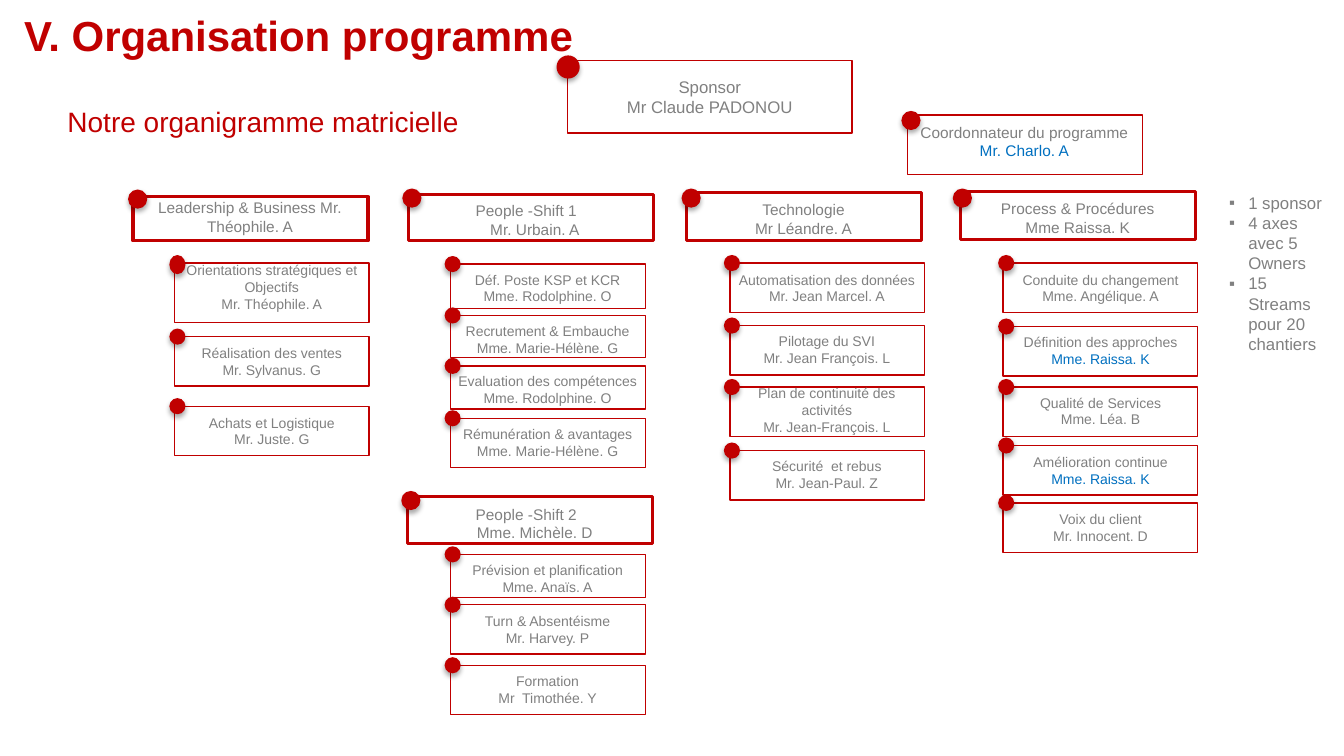
from lxml.etree import SubElement
from pptx import Presentation
from pptx.dml.color import RGBColor
from pptx.enum.shapes import MSO_SHAPE
from pptx.enum.text import MSO_ANCHOR, MSO_AUTO_SIZE, PP_ALIGN
from pptx.oxml.ns import qn
from pptx.util import Pt

PX = 9144  # 100 px to the inch
COLORS = {"red": "C00000", "grey": "808080", "blue": "0070C0",
          "white": "FFFFFF", "black": "000000"}


def emu(*lengths):
    return [int(v * PX) for v in lengths]


class Chart:
    """Style and drawing methods for the organisation chart."""
    font = "Arial"

    def __init__(self, slide):
        self.s = slide

    def color(self, name):
        return RGBColor.from_string(COLORS[name])

    def run(self, p, text, size, color="grey", bold=False):
        r = p.add_run()
        r.text = text
        r.font.name = self.font
        r.font.size = Pt(size)
        r.font.bold = bold
        r.font.color.rgb = self.color(color)

    def place(self, sp, box):
        sp.left, sp.top, sp.width, sp.height = emu(*box)
        tf = sp.text_frame
        tf.word_wrap = True
        tf.auto_size = MSO_AUTO_SIZE.SHAPE_TO_FIT_TEXT
        tf.vertical_anchor = MSO_ANCHOR.TOP
        return tf

    def paragraphs(self, tf, lines):
        for i, line in enumerate(lines):
            yield line, tf.add_paragraph() if i else tf.paragraphs[0]

    def heading(self, sp, box, text, size, bold=False):
        p = self.place(sp, box).paragraphs[0]
        p.alignment = PP_ALIGN.LEFT
        p.line_spacing = 0.9
        self.run(p, text, size, bold=bold, color="red")

    def bullets(self, sp, box, items, size):
        for item, p in self.paragraphs(self.place(sp, box), items):
            pPr = p._p.get_or_add_pPr()
            indent, = emu(19)
            pPr.set("marL", str(indent))
            pPr.set("indent", str(-indent))
            SubElement(pPr, qn("a:buFont"), typeface=self.font)
            SubElement(pPr, qn("a:buChar"), char="▪")
            p.space_before = Pt(0)
            self.run(p, item, size)

    def label(self, tf, text, size, owner="grey", indent=0):
        lines = text.split("\n")
        for line, p in self.paragraphs(tf, lines):
            last = len(lines) > 1 and line == lines[-1]
            p.alignment = PP_ALIGN.CENTER
            if last and indent:
                p._p.get_or_add_pPr().set("marL", str(emu(indent)[0]))
            self.run(p, line, size, owner if last else "grey")

    def box(self, x, y, w, h, line):
        sp = self.s.shapes.add_shape(MSO_SHAPE.RECTANGLE, *emu(x, y, w, h))
        sp.shadow.inherit = False
        sp.fill.solid()
        sp.fill.fore_color.rgb = self.color("white")
        sp.line.color.rgb = self.color("red")
        sp.line.width = Pt(line)
        return sp

    def dot(self, x, y, w, h):
        sp = self.s.shapes.add_shape(MSO_SHAPE.OVAL, *emu(x, y, w, h))
        sp.fill.solid()
        sp.fill.fore_color.rgb = self.color("red")
        sp.line.fill.background()
        sp.shadow.inherit = False
        effects = sp._element.spPr.find(qn("a:effectLst"))
        shadow = SubElement(effects, qn("a:outerShdw"), blurRad=str(Pt(3.5)),
                            dist=str(Pt(2.2)), dir="5400000", rotWithShape="0")
        tint = SubElement(shadow, qn("a:srgbClr"), val=COLORS["black"])
        SubElement(tint, qn("a:alpha"), val="32000")

    def card(self, box, text, size, dot, text_w, line=1, dx=0, dy=3, **style):
        """Outlined box, its centred label and the dot on its corner."""
        x, y, w, h = box
        self.box(x, y, w, h, line)
        tb = self.s.shapes.add_textbox(0, 0, 0, 0)
        tf = self.place(tb, (x + (w - text_w) // 2 + dx, y + dy, text_w, h - 5))
        self.label(tf, text, size, **style)
        off_x, off_y, dot_w, dot_h = dot
        self.dot(x + off_x, y + off_y, dot_w, dot_h)


# Each axis: head box, head text, head dot, head options,
# left edge, dot offset and label width of its streams, then the streams
AXES = [
    ((132, 195, 233, 44), "Leadership & Business Mr. Théophile. A",
     (-5, -7), {"dy": -3}, 173, -5, 201, [
        (261, 59, "Orientations stratégiques et Objectifs\nMr. Théophile. A",
         {"dy": -6}),
        (334, 49, "Réalisation des ventes\nMr. Sylvanus. G", {}),
        (403, 49, "Achats et Logistique\nMr. Juste. G", {})]),
    ((405, 193, 243, 46), "People -Shift 1\nMr. Urbain. A",
     (-6, -6), {"dy": 2, "dx": -4, "indent": 17}, 447, -6, 222, [
        (262, 44, "Déf. Poste KSP et KCR\nMme. Rodolphine. O", {"dy": 2}),
        (313, 42, "Recrutement & Embauche\nMme. Marie-Hélène. G", {"dy": 2}),
        (363, 43, "Evaluation des compétences\nMme. Rodolphine. O", {"dy": 2}),
        (415, 49, "Rémunération & avantages Mme. Marie-Hélène. G", {"dy": 2})]),
    ((404, 493, 243, 46), "People -Shift 2\nMme. Michèle. D",
     (-6, -6), {"dx": -3, "indent": 17}, 447, -6, 222, [
        (550, 43, "Prévision et planification\nMme. Anaïs. A", {"dy": 2}),
        (600, 49, "Turn & Absentéisme\nMr. Harvey. P", {}),
        (660, 49, "Formation\nMr  Timothée. Y", {"dy": 2})]),
    ((681, 191, 233, 48), "Technologie\nMr Léandre. A",
     (-5, -4), {}, 724, -6, 222, [
        (261, 49, "Automatisation des données\nMr. Jean Marcel. A", {}),
        (323, 49, "Pilotage du SVI\nMr. Jean François. L", {"dy": 2}),
        (384, 49, "Plan de continuité des\nactivités\nMr. Jean-François. L",
         {"dy": -7}),
        (447, 49, "Sécurité  et rebus\nMr. Jean-Paul. Z", {"dy": 2})]),
    ((953, 190, 233, 48), "Process & Procédures\nMme Raissa. K",
     (-8, -3), {}, 995, -5, 201, [
        (261, 49, "Conduite du changement\nMme. Angélique. A", {}),
        (324, 49, "Définition des approches\nMme. Raissa. K",
         {"dy": 2, "owner": "blue"}),
        (384, 49, "Qualité de Services\nMme. Léa. B", {"dy": 2}),
        (442, 49, "Amélioration continue\nMme. Raissa. K", {"owner": "blue"}),
        (499, 49, "Voix du client\nMr. Innocent. D", {})]),
]


def main():
    prs = Presentation()
    prs.slide_width, prs.slide_height = emu(1333, 750)
    s = prs.slides.add_slide(prs.slide_layouts[1])
    chart = Chart(s)

    # Title, subtitle and key figures
    chart.heading(s.shapes.title, (14, 10, 852, 56),
                  "V. Organisation programme", 30, bold=True)
    chart.heading(s.shapes.add_textbox(0, 0, 0, 0), (57, 103, 408, 40),
                  "Notre organigramme matricielle", 20)
    chart.bullets(s.placeholders[1], (1209, 186, 124, 172),
                  ["1 sponsor", "4 axes avec 5 Owners",
                   "15 Streams pour 20 chantiers"], 12)

    # Sponsor and coordinator
    sponsor = chart.box(563, 60, 282, 72, 1)
    sponsor.text_frame.vertical_anchor = MSO_ANCHOR.MIDDLE
    chart.label(sponsor.text_frame, "Sponsor\nMr Claude PADONOU", 12)
    chart.dot(552, 55, 23, 23)
    chart.card((900, 114, 233, 59), "Coordonnateur du programme\nMr. Charlo. A",
               11, (-6, -4, 19, 19), 244, owner="blue")

    # Axes and their streams
    for head, name, dot, opts, left, dot_x, text_w, streams in AXES:
        chart.card(head, name, 11, (*dot, 19, 19), 244, line=2.25, **opts)
        for top, height, text, style in streams:
            dot_h = 19 if height > 49 else 16
            chart.card((left, top, 193, height), text, 10,
                       (dot_x, -8, 16, dot_h), text_w, **style)

    prs.save("out.pptx")


if __name__ == "__main__":
    main()
